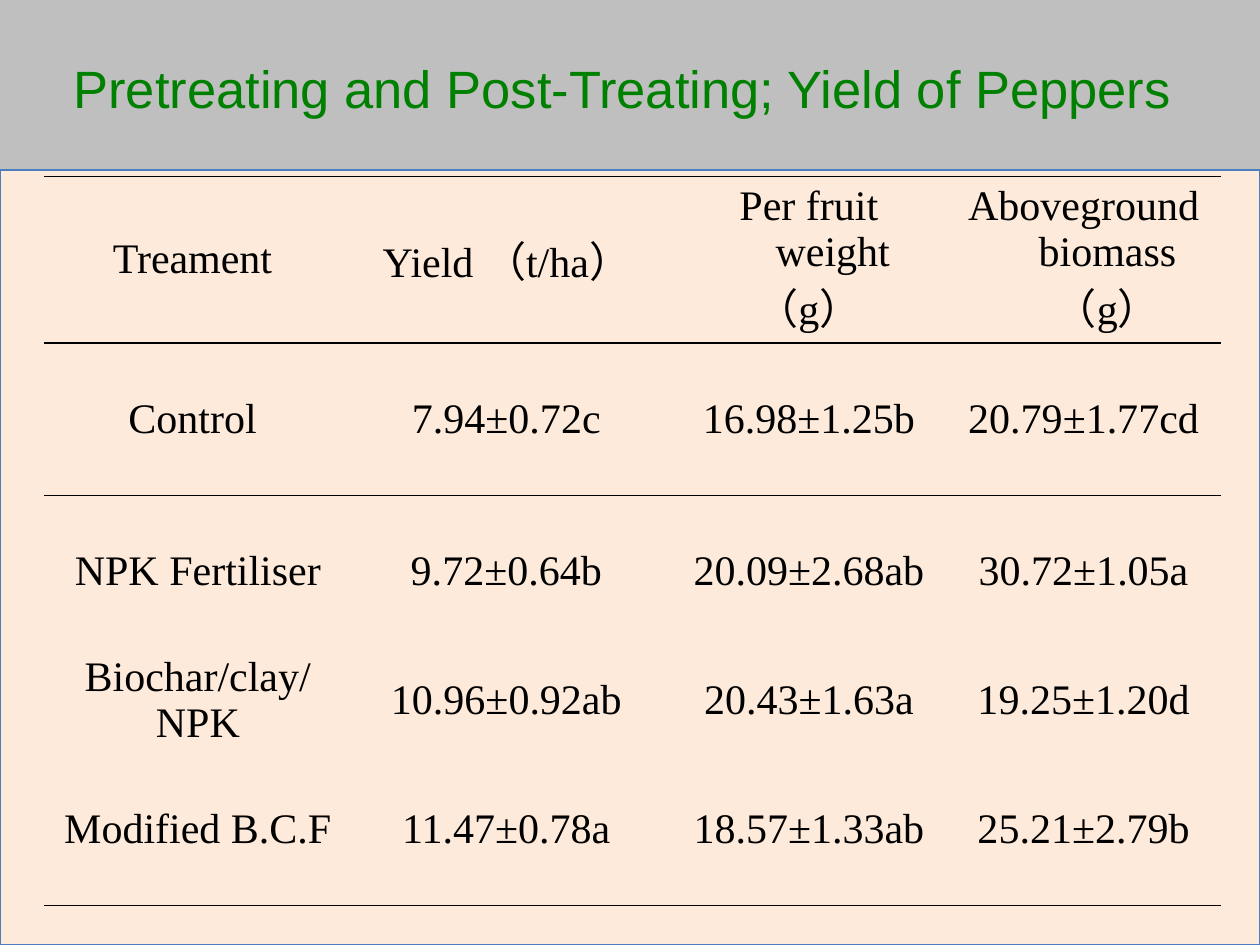
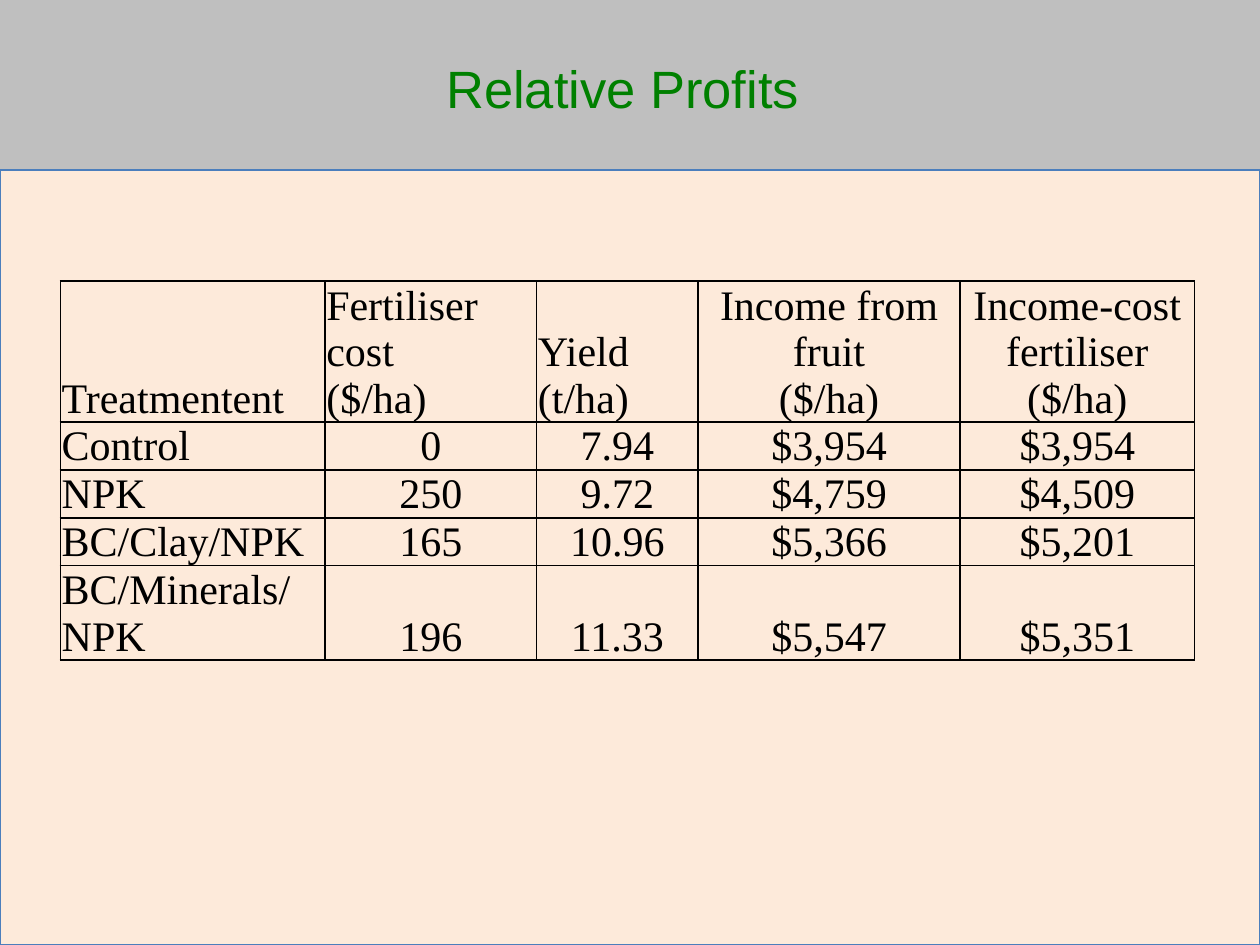
import pptx
import pptx.dml.color
import pptx.enum.shapes
import pptx.enum.text
import pptx.oxml
import pptx.oxml.ns
import pptx.util
from dataclasses import dataclass

Inches, Pt = pptx.util.Inches, pptx.util.Pt
Align, Anchor = pptx.enum.text.PP_ALIGN, pptx.enum.text.MSO_ANCHOR
RGB = pptx.dml.color.RGBColor.from_string


@dataclass(frozen=True)
class Theme:
    band: str = "BFBFBF"
    title: str = "008000"
    panel: str = "FDEADA"
    panel_edge: str = "4B7EBC"
    ink: str = "000000"
    title_font: str = "Arial"
    table_font: str = "Times New Roman"
    title_size: int = 30
    table_size: int = 24
    panel_rule: float = 0.75
    table_rule: float = 1


theme = Theme()
WIDTH, HEIGHT = 10, 7.5
BAND = 0.18 * HEIGHT
NO_STYLE = "{2D5ABB26-0587-4C30-8999-92F81FD0307C}"
HANGING = Inches(0.38)

deck = pptx.Presentation()
deck.slide_width, deck.slide_height = Inches(WIDTH), Inches(HEIGHT)
blank = deck.slide_layouts[6]


def add_panel(slide, top, height, fill):
    """Add a plain rectangle across the full slide width."""
    panel = slide.shapes.add_shape(
        pptx.enum.shapes.MSO_SHAPE.RECTANGLE,
        0, Inches(top), Inches(WIDTH), Inches(height))
    panel.shadow.inherit = False
    panel.fill.solid()
    panel.fill.fore_color.rgb = RGB(fill)
    panel.line.fill.background()
    return panel


def rule_cell(cell, sides):
    """Draw the cell borders named by L, R, T and B, in that order."""
    cell.fill.background()
    borders = cell._tc.get_or_add_tcPr()
    for place, side in enumerate(sides):
        borders.insert(place, pptx.oxml.parse_xml(
            f'<a:ln{side} {pptx.oxml.ns.nsdecls("a")} w="{Pt(theme.table_rule)}">'
            f'<a:solidFill><a:srgbClr val="{theme.ink}"/></a:solidFill></a:ln{side}>'))


yield_rows = [
    ["Treament ", "Yield （t/ha） ", "Per fruit weight\n（g）", "Aboveground biomass （g）"],
    ["Control ", "7.94±0.72c ", "16.98±1.25b", "20.79±1.77cd"],
    ["NPK Fertiliser", "9.72±0.64b ", "20.09±2.68ab", "30.72±1.05a"],
    ["Biochar/clay/NPK", "10.96±0.92ab ", "20.43±1.63a", "19.25±1.20d"],
    ["Modified B.C.F", "11.47±0.78a ", "18.57±1.33ab", "25.21±2.79b"],
]
profit_rows = [
    ["Treatmentent", "Fertiliser cost\n($/ha)", "Yield\n(t/ha)",
     "Income from fruit\n($/ha)", "Income-cost fertiliser ($/ha)"],
    ["Control", "0", "7.94", "$3,954", "$3,954"],
    ["NPK", "250", "9.72", "$4,759", "$4,509"],
    ["BC/Clay/NPK", "165", "10.96", "$5,366", "$5,201"],
    ["BC/Minerals/NPK", "196", "11.33", "$5,547", "$5,351"],
]

# Each topic: title, rows, left, top, column widths, row heights, fully ruled
topics = [
    ("Pretreating and Post-Treating; Yield of Peppers ", yield_rows, 0.35, 1.4,
     [2.44, 2.54, 2.18, 2.18], [1.32, 1.21, 1.21, 0.82, 1.21], False),
    ("Relative Profits ", profit_rows, 0.48, 2.23,
     [2.1, 1.68, 1.28, 2.08, 1.86], [1.12, 0.38, 0.38, 0.38, 0.75], True),
]

for title, rows, left, top, columns, heights, ruled in topics:
    slide = deck.slides.add_slide(blank)

    heading = add_panel(slide, 0, BAND, theme.band).text_frame
    heading.word_wrap = True
    heading.vertical_anchor = Anchor.MIDDLE
    heading.margin_top = Inches(0.09)
    heading.text = title
    line = heading.paragraphs[0]
    line.alignment = Align.CENTER
    line.font.name, line.font.size = theme.title_font, Pt(theme.title_size)
    line.font.color.rgb = RGB(theme.title)

    body = add_panel(slide, BAND, HEIGHT - BAND, theme.panel)
    body.line.color.rgb = RGB(theme.panel_edge)
    body.line.width = Pt(theme.panel_rule)

    results = slide.shapes.add_table(
        len(rows), len(columns), Inches(left), Inches(top),
        Inches(sum(columns)), Inches(sum(heights))).table
    results.first_row = results.horz_banding = False
    results._tbl.tblPr.find(pptx.oxml.ns.qn("a:tableStyleId")).text = NO_STYLE
    for column, width in zip(results.columns, columns):
        column.width = Inches(width)

    for r, (entries, height) in enumerate(zip(rows, heights)):
        results.rows[r].height = Inches(height)
        for c, entry in enumerate(entries):
            cell = results.cell(r, c)
            cell.text = entry
            if ruled:
                sides = "LRTB"
                cell.vertical_anchor = Anchor.BOTTOM
                cell.margin_left = cell.margin_right = cell.margin_top = Inches(0.01)
                cell.margin_bottom = 0
            else:
                sides = {0: "TB", 1: "T", len(rows) - 1: "B"}.get(r, "")
                cell.vertical_anchor = Anchor.MIDDLE
            rule_cell(cell, sides)

            flush_left = ruled and (c == 0 or r == 0 and c < 3)
            for line in cell.text_frame.paragraphs:
                line.alignment = Align.LEFT if flush_left else Align.CENTER
                if r == 0 and not ruled:
                    indents = line._p.get_or_add_pPr()
                    indents.set("marL", str(HANGING))
                    indents.set("indent", str(-HANGING))
                line.font.name, line.font.size = theme.table_font, Pt(theme.table_size)
                line.font.color.rgb = RGB(theme.ink)

deck.save("out.pptx")
